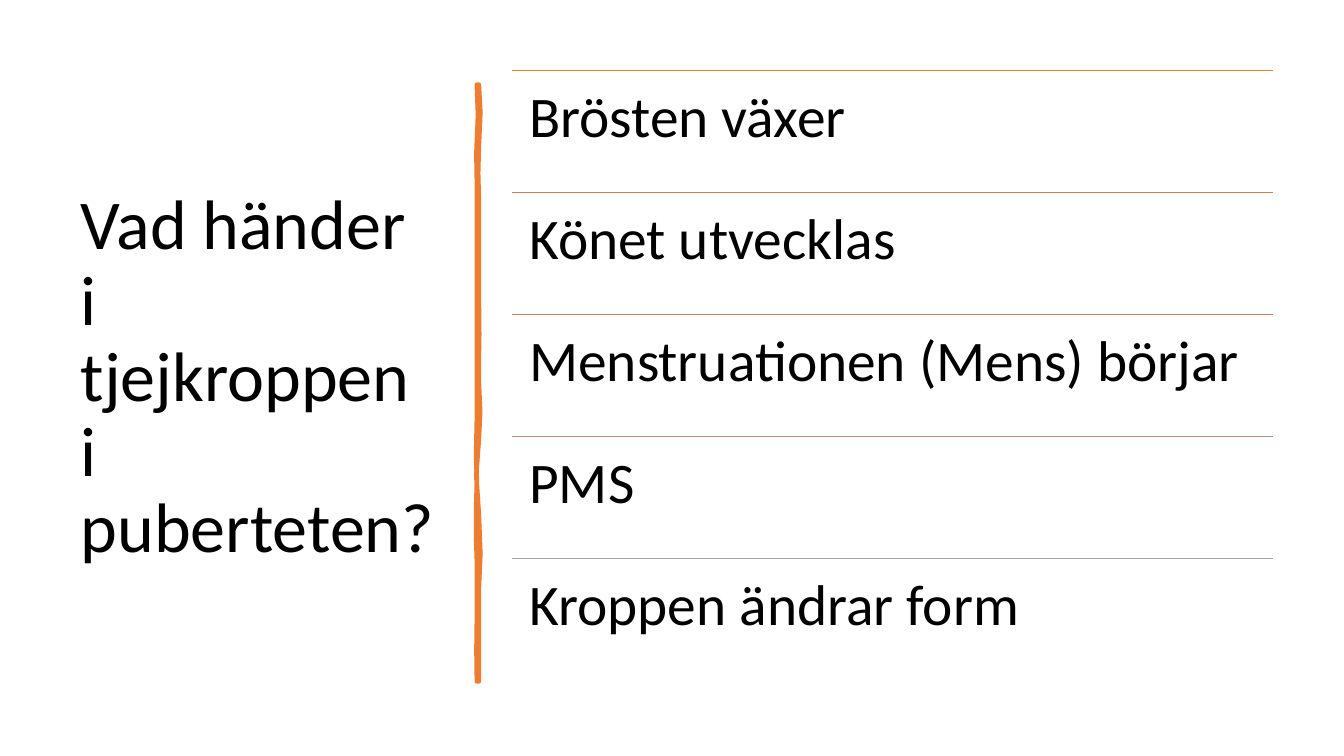
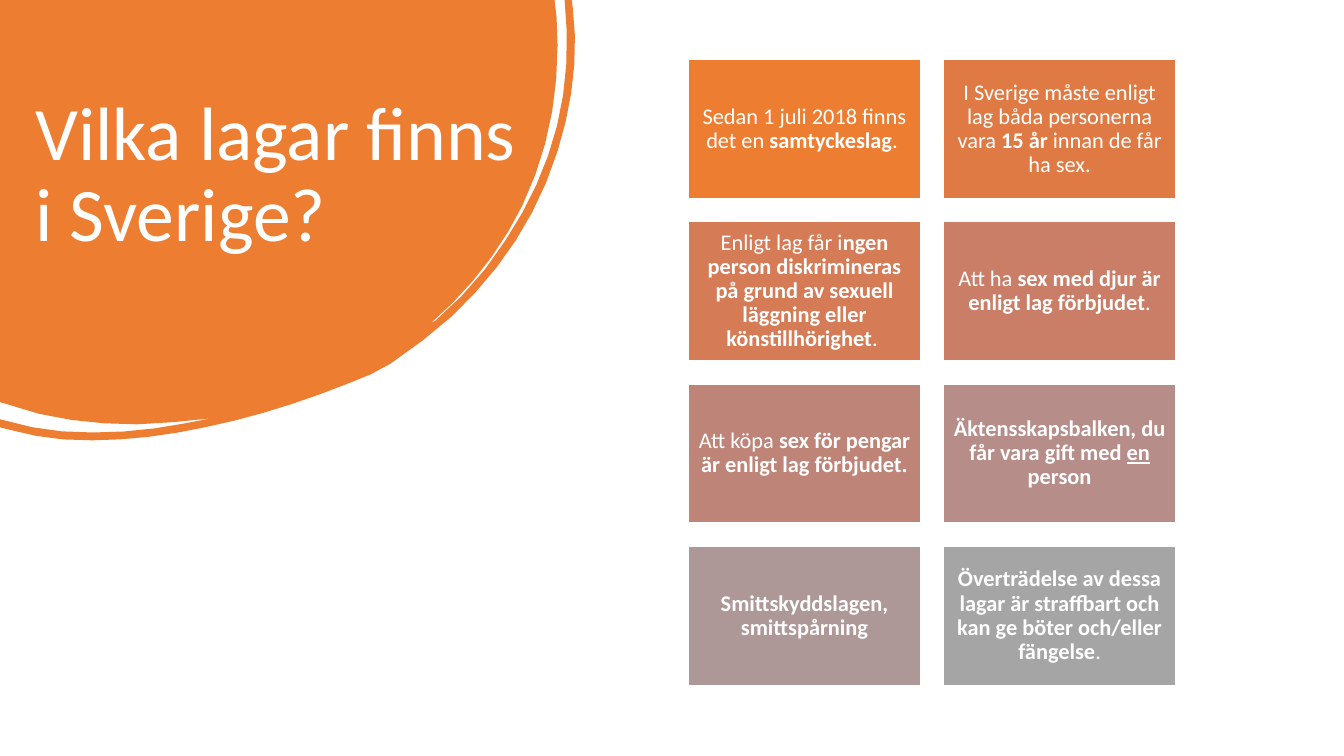
from math import dist

from lxml import etree
from pptx import Presentation
from pptx.dml.color import RGBColor
from pptx.enum.shapes import MSO_CONNECTOR, MSO_SHAPE
from pptx.enum.text import MSO_ANCHOR, MSO_AUTO_SIZE, PP_ALIGN
from pptx.oxml.ns import qn
from pptx.util import Inches, Pt

RECTANGLE, STRAIGHT = MSO_SHAPE.RECTANGLE, MSO_CONNECTOR.STRAIGHT
TOP, MIDDLE = MSO_ANCHOR.TOP, MSO_ANCHOR.MIDDLE
LEFT, CENTER = PP_ALIGN.LEFT, PP_ALIGN.CENTER
NO_AUTOFIT = MSO_AUTO_SIZE.NONE

FONT = "Calibri"
COLORS = {"text": "000000", "light": "FFFFFF", "accent": "ED7D31"}
RULE_COLORS = ["ED7D31", "D87A51", "C48170", "B4908B", "A5A5A5"]
CARD_COLORS = ["ED7D31", "E07A44", "D57B56", "CA7E67",
               "BF8478", "B68D88", "AD9897", "A5A5A5"]
CHORD = 0.3  # inches of curve drawn by one straight piece
NO_BREAK_SPACE = chr(160)


def write_text(shape, pieces, size, color, align=LEFT, anchor=TOP, inset=None):
    """Fill a shape with (text, style) pieces; style holds b for bold, u for underline."""
    frame = shape.text_frame
    frame.word_wrap = True
    frame.auto_size = NO_AUTOFIT
    frame.vertical_anchor = anchor
    if inset is not None:
        frame.margin_left = frame.margin_right = Inches(inset)
        frame.margin_top = frame.margin_bottom = Inches(inset)
    paragraph = frame.paragraphs[0]
    paragraph.alignment = align
    paragraph.line_spacing = 0.9
    for text, style in pieces:
        run = paragraph.add_run()
        run.text = text
        run.font.name = FONT
        run.font.size = Pt(size)
        run.font.bold = "b" in style
        run.font.underline = "u" in style
        run.font.color.rgb = RGBColor.from_string(color)


def add_outline(slide, start, segments, color):
    """Draw a closed outline; a segment is an end point or a cubic curve (x1, y1, x2, y2, x, y)."""
    points = [start]
    for segment in segments:
        if len(segment) == 2:
            points.append(segment)
            continue
        knots = [points[-1], segment[:2], segment[2:4], segment[4:]]
        steps = max(1, round(dist(knots[0], knots[3]) / CHORD))
        for step in range(1, steps + 1):
            t = step / steps
            weights = [(1 - t) ** 3, 3 * t * (1 - t) ** 2, 3 * t * t * (1 - t), t ** 3]
            points.append(tuple(sum(weight * knot[axis] for weight, knot in zip(weights, knots))
                                for axis in (0, 1)))
    vertices = [(Inches(x), Inches(y)) for x, y in points]
    builder = slide.shapes.build_freeform(*vertices[0], scale=1.0)
    builder.add_line_segments(vertices[1:], close=True)
    shape = builder.convert_to_shape()
    shape.shadow.inherit = False
    shape.fill.solid()
    shape.fill.fore_color.rgb = RGBColor.from_string(color)
    shape.line.fill.background()
    return shape


presentation = Presentation()
presentation.slide_width, presentation.slide_height = Inches(13.33), Inches(7.5)
title_only = presentation.slide_layouts[5]

# Both slides: a title placed and formatted in its placeholder
titles = [
    ("Vad händer i tjejkroppen i puberteten?", (0.7, 0.7, 3.72, 6.11), 50, "text", MIDDLE),
    (f"Vilka lagar finns i{NO_BREAK_SPACE}Sverige?", (0.25, 0.89, 5.57, 2.22), 54, "light", TOP),
]
slides = []
for text, box, size, color, anchor in titles:
    slide = presentation.slides.add_slide(title_only)
    title = slide.shapes.title
    title.left, title.top, title.width, title.height = (Inches(length) for length in box)
    write_text(title, [(text, "")], size, COLORS[color], anchor=anchor)
    slides.append(slide)
body_slide, law_slide = slides

# Slide 1: hand-drawn divider
divider_segments = [
    (4.77, 1.02, 4.77, 1.19, 4.75, 1.46), (4.73, 1.73, 4.76, 1.95, 4.75, 2.26),
    (4.75, 2.94), (4.74, 3.25, 4.77, 3.42, 4.75, 3.56),
    (4.73, 3.7, 4.79, 4.14, 4.75, 4.36), (4.71, 4.57, 4.72, 4.84, 4.75, 5.1),
    (4.77, 5.36, 4.77, 5.64, 4.75, 5.84), (4.75, 6.76), (4.73, 6.76),
    (4.74, 6.46, 4.71, 6.44, 4.73, 6.13), (4.73, 5.57),
    (4.72, 5.44, 4.72, 4.95, 4.73, 4.77), (4.73, 4.59, 4.71, 4.45, 4.73, 4.15),
    (4.73, 3.35), (4.73, 2.5), (4.73, 1.81),
    (4.7, 1.63, 4.77, 1.04, 4.73, 0.84),
]
divider = add_outline(body_slide, (4.75, 0.84), divider_segments, COLORS["accent"])
divider.line.color.rgb = RGBColor.from_string(COLORS["accent"])
divider.line.width = Pt(3.25)

# Slide 1: ruled list
changes = ["Brösten växer", "Könet utvecklas", "Menstruationen (Mens) börjar",
           "PMS", "Kroppen ändrar form"]
list_left, list_top, list_width, row_height = 5.08, 0.7, 7.55, 1.21
for row, (change, color) in enumerate(zip(changes, RULE_COLORS)):
    left, top = Inches(list_left), Inches(list_top + row * row_height)
    width = Inches(list_width)
    rule = body_slide.shapes.add_connector(STRAIGHT, left, top, left + width, top)
    rule.line.color.rgb = RGBColor.from_string(color)
    rule.line.width = Pt(1)
    etree.SubElement(rule.element.spPr, qn("a:effectLst"))
    label = body_slide.shapes.add_textbox(left, top, width, Inches(row_height))
    write_text(label, [(change, "")], 41, COLORS["text"], inset=0.17)

# Slide 2: round corner panel with a thin outer ring, kept behind the title
panel_segments = [
    (5.5, 0), (5.52, 0.17),
    (5.53, 0.26, 5.53, 0.36, 5.53, 0.45), (5.53, 1.01, 5.42, 1.54, 5.18, 2.04),
    (4.96, 2.49, 4.65, 2.88, 4.27, 3.21), (4.32, 3.18),
    (4.59, 2.95, 4.82, 2.69, 5.01, 2.39), (5.43, 1.76, 5.65, 1.07, 5.62, 0.3),
    (5.6, 0), (5.67, 0), (5.68, 0.07),
    (5.74, 0.54, 5.68, 1.02, 5.53, 1.5), (5.33, 2.14, 4.97, 2.68, 4.48, 3.14),
    (4.39, 3.23, 4.29, 3.31, 4.19, 3.38), (4.09, 3.46, 3.99, 3.53, 3.87, 3.61),
    (3.75, 3.69, 3.6, 3.75, 3.44, 3.81), (2.99, 3.99, 2.52, 4.14, 2.03, 4.24),
    (1.57, 4.34, 1.1, 4.39, 0.63, 4.36), (0.45, 4.34, 0.28, 4.32, 0.12, 4.27),
    (0, 4.24), (0, 4.16),
    (0.23, 4.23, 0.42, 4.26, 0.61, 4.28), (1.03, 4.31, 1.43, 4.28, 1.84, 4.2),
    (2.1, 4.15),
    (1.86, 4.18, 1.61, 4.2, 1.36, 4.21), (0.92, 4.21, 0.48, 4.16, 0.07, 4.01),
    (0, 3.99),
]
panel = add_outline(law_slide, (0, 0), panel_segments, COLORS["accent"])
panel.element.addnext(law_slide.shapes.title.element)

# Slide 2: law cards in two columns
laws = [
    [("Sedan 1 juli 2018 finns det en ", ""), ("samtyckeslag", "b"), (". ", "")],
    [("I Sverige måste enligt lag båda personerna vara ", ""), ("15 år ", "b"),
     ("innan de får ha sex.", "")],
    [("Enligt lag får i", ""),
     ("ngen person diskrimineras på grund av sexuell läggning eller könstillhörighet", "b"),
     (". ", "")],
    [("Att ha ", ""), ("sex med djur är enligt lag förbjudet", "b"), (".", "")],
    [("Att köpa ", ""), ("sex för pengar är enligt lag förbjudet.", "b")],
    [("Äktensskapsbalken, du får vara gift med ", "b"), ("en", "bu"), (" person", "b")],
    [("Smittskyddslagen, smittspårning", "b")],
    [("Överträdelse av dessa lagar är straffbart och kan ge böter och/eller fängelse", "b"),
     (".", "")],
]
grid_left, grid_top, card_width, card_height, gap = 6.83, 0.59, 2.3, 1.38, 0.23
for index, (law, color) in enumerate(zip(laws, CARD_COLORS)):
    row, column = divmod(index, 2)
    card = law_slide.shapes.add_shape(
        RECTANGLE,
        Inches(grid_left + column * (card_width + gap)),
        Inches(grid_top + row * (card_height + gap)),
        Inches(card_width), Inches(card_height))
    card.shadow.inherit = False
    card.fill.solid()
    card.fill.fore_color.rgb = RGBColor.from_string(color)
    card.line.color.rgb = RGBColor.from_string(COLORS["light"])
    card.line.width = Pt(1)
    write_text(card, law, 16, COLORS["light"], align=CENTER, anchor=MIDDLE, inset=0.07)

presentation.save("out.pptx")
